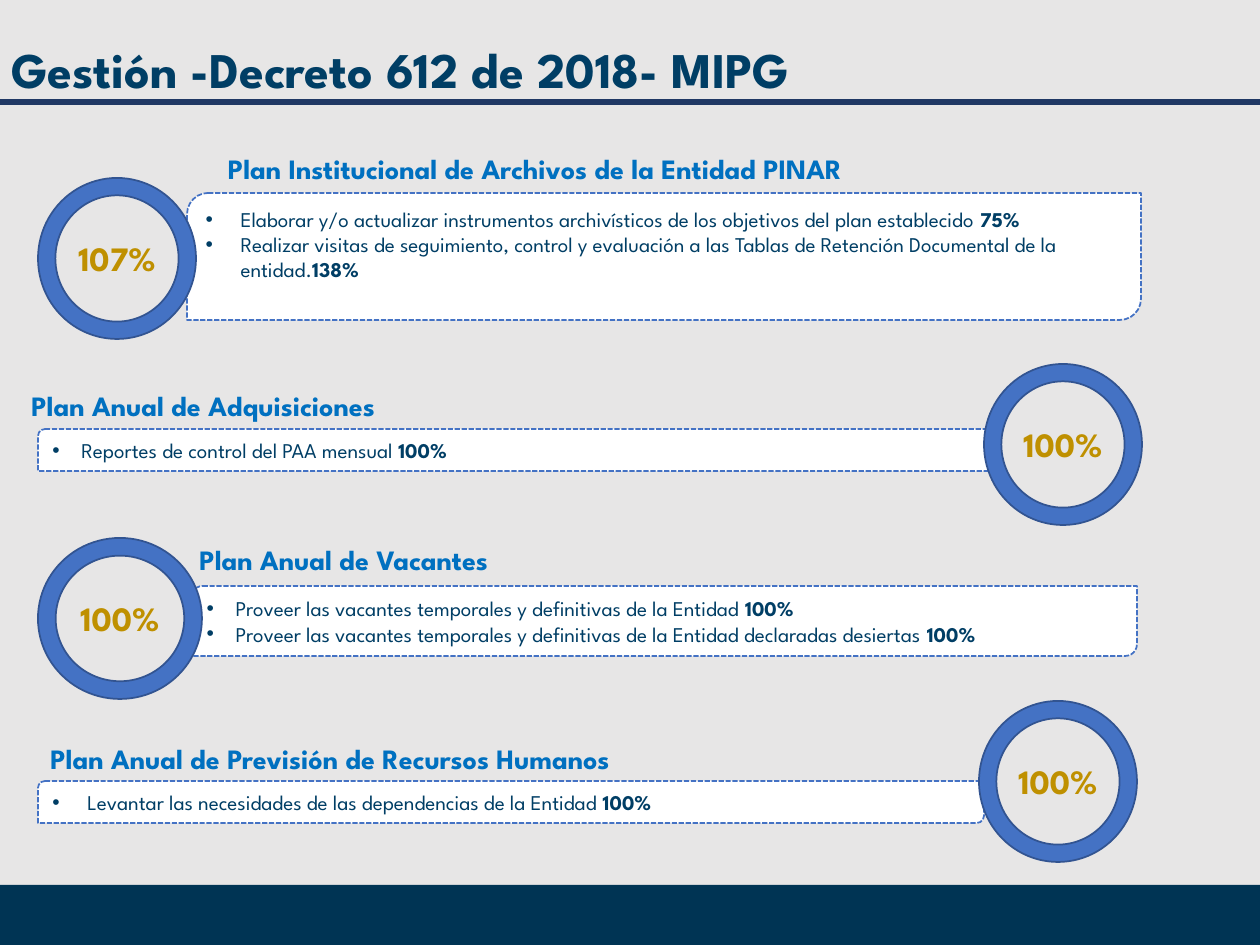
from lxml import etree
from pptx import Presentation
from pptx.dml.color import RGBColor
from pptx.enum.dml import MSO_LINE
from pptx.enum.shapes import MSO_CONNECTOR, MSO_SHAPE
from pptx.enum.text import MSO_ANCHOR, PP_ALIGN
from pptx.oxml.ns import qn
from pptx.util import Pt

LEFT, CENTER = PP_ALIGN.LEFT, PP_ALIGN.CENTER
MIDDLE = MSO_ANCHOR.MIDDLE
RECT, DONUT = MSO_SHAPE.RECTANGLE, MSO_SHAPE.DONUT
PANEL = MSO_SHAPE.ROUND_2_DIAG_RECTANGLE
STRAIGHT = MSO_CONNECTOR.STRAIGHT
DASH = MSO_LINE.SQUARE_DOT
PX_PER_INCH = 126
FONT = "League Spartan"
COLORS = {
    "bg": "E7E6E6", "footer": "003454", "rule": "203864", "panel": "FFFFFF",
    "blue": "4472C4", "ring_edge": "325491", "text": "003E65",
    "heading": "0070C0", "gold": "BF9000",
}
FORMATS = {
    "title": {"size": Pt(28.5), "bold": True, "color": "text"},
    "heading": {"size": Pt(16), "bold": True, "color": "heading"},
    "value": {"size": Pt(19.5), "bold": True, "color": "gold"},
    "body": {"size": Pt(12), "bold": False, "color": "text"},
    "share": {"size": Pt(12), "bold": True, "color": "text"},
}


def px(n):
    return round(n * 914400 / PX_PER_INCH)


def rgb(name):
    return RGBColor.from_string(COLORS[name])


class Deck:
    def __init__(self, width, height):
        self.prs = Presentation()
        self.prs.slide_width, self.prs.slide_height = px(width), px(height)
        self.s = self.prs.slides.add_slide(self.prs.slide_layouts[6])
        fill = self.s.background.fill
        fill.solid()
        fill.fore_color.rgb = rgb("bg")

    def shape(self, kind, box, fill, line=None):
        sp = self.s.shapes.add_shape(kind, *map(px, box))
        sp.shadow.inherit = False
        sp.fill.solid()
        sp.fill.fore_color.rgb = rgb(fill)
        if line:
            sp.line.color.rgb = rgb(line)
            sp.line.width = Pt(1)
        else:
            sp.line.fill.background()
        return sp

    def rule(self, x1, y1, x2, y2):
        c = self.s.shapes.add_connector(STRAIGHT, *map(px, (x1, y1, x2, y2)))
        c.line.color.rgb = rgb("rule")
        c.line.width = Pt(3)
        etree.SubElement(c._element.spPr, qn("a:effectLst"))

    def run(self, p, text, style):
        r = p.add_run()
        r.text = text
        r.font.name = FONT
        for key, value in FORMATS[style].items():
            if key == "color":
                r.font.color.rgb = rgb(value)
            else:
                setattr(r.font, key, value)

    def text(self, box, text, style, align=LEFT, wrap=True):
        tf = self.s.shapes.add_textbox(*map(px, box)).text_frame
        tf.word_wrap = wrap
        tf.vertical_anchor = MIDDLE
        p = tf.paragraphs[0]
        p.alignment = align
        self.run(p, text, style)

    def panel(self, box, items, indent, bottom=6):
        sp = self.shape(PANEL, box, "panel", "blue")
        sp.line.dash_style = DASH
        tf = sp.text_frame
        tf.word_wrap = True
        tf.vertical_anchor = MIDDLE
        tf.margin_bottom = px(bottom)
        for i, (label, share) in enumerate(items):
            p = tf.add_paragraph() if i else tf.paragraphs[0]
            p.alignment = LEFT
            pPr = p._p.get_or_add_pPr()
            pPr.set("marL", str(px(indent)))
            pPr.set("indent", str(-px(indent)))
            etree.SubElement(pPr, qn("a:buFont")).set("typeface", "Arial")
            etree.SubElement(pPr, qn("a:buChar")).set("char", "•")
            self.run(p, label, "body")
            self.run(p, share, "share")

    def ring(self, x, y, w, value):
        sp = self.shape(DONUT, (x, y, w, 161), "blue", "ring_edge")
        sp.adjustments[0] = 0.11
        self.text((x, y + 53, w, 54), value, "value", CENTER)


PLANS = [
    {"heading": ((179, 145, 712, 47), "Plan Institucional de Archivos de la Entidad PINAR", CENTER),
     "panel": (187, 193, 954, 127), "indent": 35, "bottom": 31, "ring": (38, 178, 158, "107%"),
     "items": [
         ("Elaborar y/o actualizar instrumentos archivísticos de los objetivos del plan establecido ", "75%"),
         ("Realizar visitas de seguimiento, control y evaluación a las Tablas de Retención "
          "Documental de la entidad.", "138%")]},
    {"heading": ((19, 382, 413, 47), "Plan Anual de Adquisiciones", LEFT),
     "panel": (38, 429, 963, 42), "indent": 29, "ring": (984, 364, 158, "100%"),
     "items": [("Reportes de control del PAA mensual ", "100%")]},
    {"heading": ((187, 536, 383, 47), "Plan Anual de Vacantes", LEFT),
     "panel": (191, 586, 946, 70), "indent": 29, "ring": (38, 538, 164, "100%"),
     "items": [
         ("Proveer las vacantes temporales y definitivas de la Entidad ", "100%"),
         ("Proveer las vacantes temporales y definitivas de la Entidad declaradas desiertas ", "100%")]},
    {"heading": ((38, 735, 806, 47), "Plan Anual de Previsión de Recursos Humanos", LEFT),
     "panel": (38, 781, 946, 42), "indent": 35, "ring": (979, 701, 158, "100%"),
     "items": [("Levantar las necesidades de las dependencias de la Entidad ", "100%")]},
]


def main():
    deck = Deck(1260, 945)
    deck.shape(RECT, (0, 885, 1260, 60), "footer")
    deck.rule(0, 102, 1260, 102)
    deck.text((-1, 37, 1063, 64), "Gestión -Decreto 612 de 2018- MIPG", "title")
    for plan in PLANS:
        deck.panel(plan["panel"], plan["items"], plan["indent"], plan.get("bottom", 6))
        box, heading, align = plan["heading"]
        deck.text(box, heading, "heading", align)
        deck.ring(*plan["ring"])
    deck.prs.save("out.pptx")


if __name__ == "__main__":
    main()
